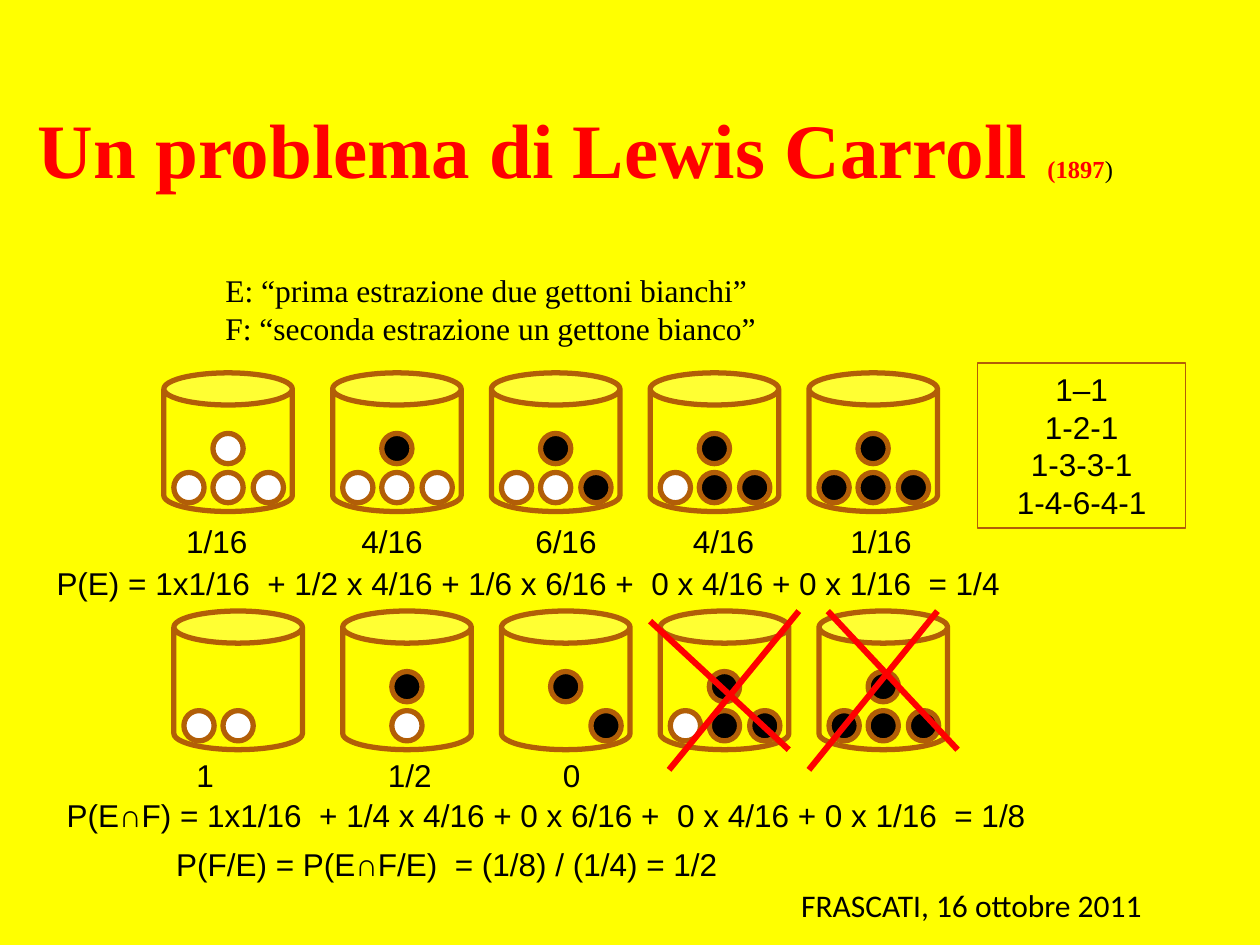
from lxml import etree
from pptx import Presentation
from pptx import util as u
from pptx.dml import color
from pptx.enum import shapes, text
from pptx.oxml import ns

Inches = u.Inches
COLORS = {"yellow": "FFFF00", "brown": "B25E07", "red": "FF0000",
          "white": "FFFFFF", "black": "000000"}
TOKEN_COLORS = {"W": "white", "B": "black"}
TOKEN_SPOTS = [(0.39, 0.48), (0.08, 0.79), (0.39, 0.79), (0.71, 0.79)]
URN_OFFSETS = [0, 1.34, 2.6, 3.86, 5.12]


def rgb(name):
    return color.RGBColor.from_string(COLORS[name])


def write_text(box, lines, font="Arial", size=18, tint="black", align="LEFT", wrap=True):
    frame = box.text_frame
    frame.word_wrap = wrap
    frame.auto_size = text.MSO_AUTO_SIZE.SHAPE_TO_FIT_TEXT
    for index, line in enumerate(lines):
        para = frame.add_paragraph() if index else frame.paragraphs[0]
        para.alignment = getattr(text.PP_ALIGN, align)
        spans = [(line, {})] if isinstance(line, str) else line
        for words, style in spans:
            span = para.add_run()
            span.text = words
            span.font.name = font
            span.font.size = u.Pt(style.get("size", size))
            span.font.bold = style.get("bold", False)
            span.font.color.rgb = rgb(style.get("tint", tint))


def add_text(page, area, *lines, **style):
    box = page.shapes.add_textbox(*map(Inches, area))
    write_text(box, lines, **style)
    return box


def add_outlined(page, kind, area, fill, width=3):
    shape = page.shapes.add_shape(kind, *map(Inches, area))
    shape.shadow.inherit = False
    shape.fill.solid()
    shape.fill.fore_color.rgb = rgb(fill)
    shape.line.color.rgb = rgb("brown")
    shape.line.width = u.Pt(width)
    return shape


def add_urn(page, left, top, tokens):
    can = add_outlined(page, shapes.MSO_SHAPE.CAN, (left, top, 1.02, 1.1), "yellow")
    fill_color = can._element.spPr.find(ns.qn("a:solidFill")).find(ns.qn("a:srgbClr"))
    etree.SubElement(fill_color, ns.qn("a:alpha"), val="50000")
    for token, (across, down) in zip(tokens, TOKEN_SPOTS):
        if token in TOKEN_COLORS:
            add_outlined(page, shapes.MSO_SHAPE.OVAL,
                         (left + across, top + down, 0.24, 0.24), TOKEN_COLORS[token])


def add_urn_row(page, left, top, contents):
    for offset, tokens in zip(URN_OFFSETS, contents):
        add_urn(page, left + offset, top, tokens)


def add_labels(page, left, top, labels, stops):
    box = add_text(page, (left, top, 6.14, 0.4), "\t".join(labels))
    properties = box.text_frame.paragraphs[0]._p.get_or_add_pPr()
    tabs = etree.SubElement(properties, ns.qn("a:tabLst"))
    for stop in stops:
        etree.SubElement(tabs, ns.qn("a:tab"), pos=str(Inches(stop)), algn="l")


def add_stroke(page, start, end):
    stroke = page.shapes.add_connector(
        shapes.MSO_CONNECTOR.STRAIGHT, *map(Inches, start + end))
    stroke.line.color.rgb = rgb("red")
    stroke.line.width = u.Pt(3.5)
    etree.SubElement(stroke._element.spPr, ns.qn("a:effectLst"))


def add_heading(page):
    add_text(page, (0.2, 0.76, 8.81, 0.84),
             [("Un problema di Lewis Carroll ", {"size": 44, "bold": True}),
              ("(1897", {"bold": True}), (")", {"tint": "black"})],
             font="Times New Roman", size=14, tint="red", wrap=False)
    add_text(page, (1.69, 2.1, 4.49, 0.71),
             "E: “prima estrazione due gettoni bianchi”",
             "F: “seconda estrazione un gettone bianco”", font="Times New Roman")


def add_triangle(page, area):
    panel = add_outlined(page, shapes.MSO_SHAPE.RECTANGLE, area, "yellow", 0.75)
    write_text(panel, ["1–1", "1-2-1", "1-3-3-1", "1-4-6-4-1"], align="CENTER")


def add_first_draw(page, left, top):
    add_urn_row(page, left, top, ["WWWW", "BWWW", "BWWB", "BWBB", "BBBB"])
    add_labels(page, left + 0.08, top + 1.13,
               ["1/16", "4/16", "6/16", "4/16", "1/16"], [1.39, 2.77, 4.02, 5.27])
    add_text(page, (left - 0.95, top + 1.47, 7.72, 0.4),
             "P(E) = 1x1/16  + 1/2 x 4/16 + 1/6 x 6/16 +  0 x 4/16 + 0 x 1/16  = 1/4")


def add_second_draw(page, left, top):
    add_urn_row(page, left, top, ["-WW-", "B-W-", "B--B", "BWBB", "BBBB"])
    add_labels(page, left + 0.08, top + 1.1, ["1", "1/2", "0"], [1.52, 2.91])
    add_stroke(page, (6.34, 4.85), (5.31, 6.11))
    add_stroke(page, (6.26, 5.95), (5.16, 4.93))
    add_stroke(page, (7.44, 4.85), (6.42, 6.11))
    add_stroke(page, (6.57, 4.85), (7.6, 5.95))


def add_conclusion(page):
    add_text(page, (0.43, 6.27, 7.95, 0.4),
             "P(E∩F) = 1x1/16  + 1/4 x 4/16 + 0 x 6/16 +  0 x 4/16 + 0 x 1/16  = 1/8")
    add_text(page, (1.3, 6.66, 4.57, 0.4), "P(F/E) = P(E∩F/E)  = (1/8) / (1/4) = 1/2")
    add_text(page, (6.26, 6.98, 3.07, 0.4), "FRASCATI, 16 ottobre 2011", font="Calibri")


def main():
    deck = Presentation()
    deck.slide_width, deck.slide_height = Inches(10), Inches(7.5)
    page = deck.slides.add_slide(deck.slide_layouts[6])
    page.background.fill.solid()
    page.background.fill.fore_color.rgb = rgb("yellow")
    add_heading(page)
    add_first_draw(page, 1.3, 2.96)
    add_triangle(page, (7.76, 2.88, 1.65, 1.31))
    add_second_draw(page, 1.38, 4.85)
    add_conclusion(page)
    deck.save("out.pptx")


if __name__ == "__main__":
    main()
